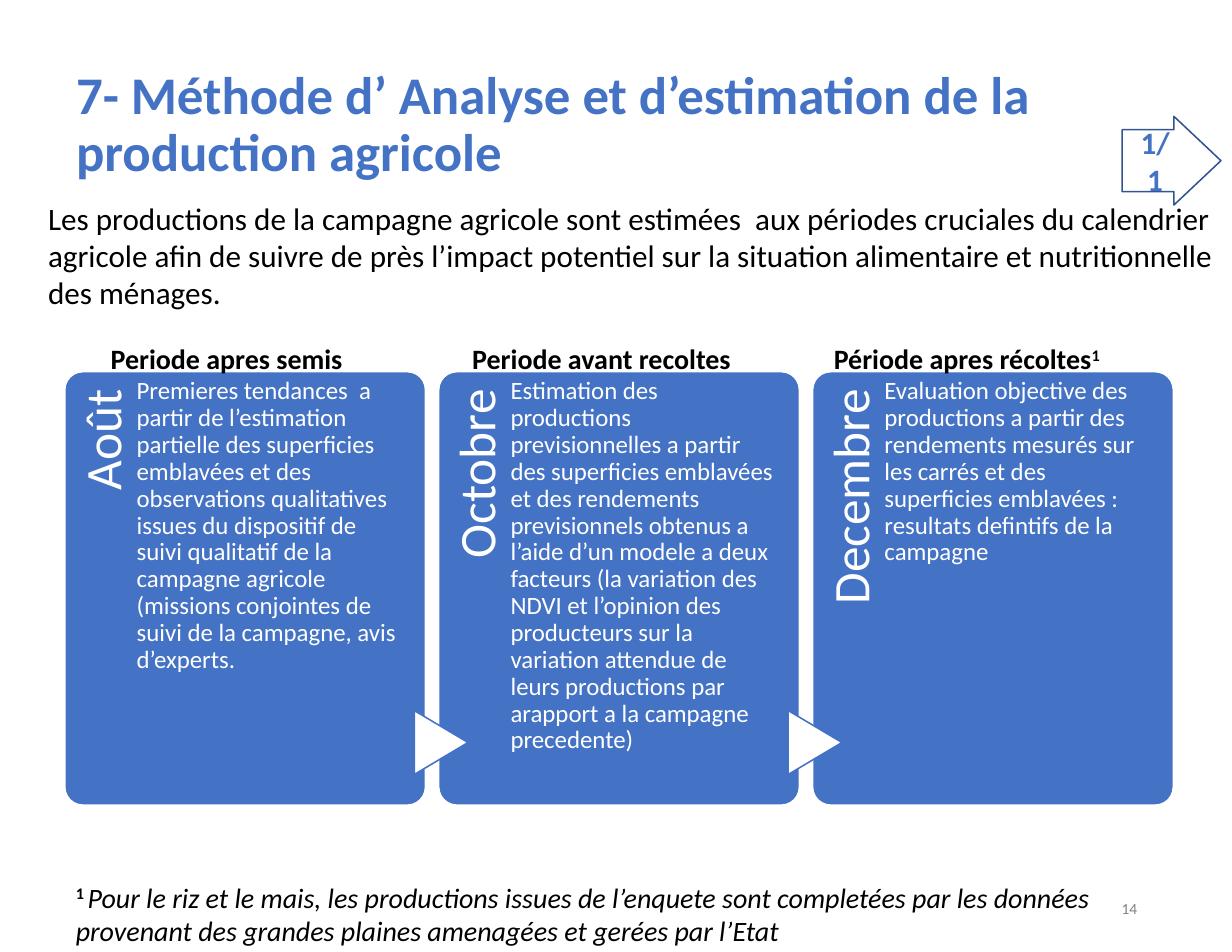
from dataclasses import dataclass

from pptx import Presentation
from pptx.dml.color import RGBColor
from pptx.enum.shapes import MSO_SHAPE
from pptx.enum.text import MSO_ANCHOR, MSO_AUTO_SIZE, PP_ALIGN
from pptx.shapes.autoshape import Shape
from pptx.slide import Slide
from pptx.text.text import TextFrame, _Run
from pptx.util import Cm, Pt

BLUE = RGBColor(0x44, 0x72, 0xC4)
DARK_BLUE = RGBColor(0x32, 0x54, 0x91)
WHITE = RGBColor(0xFF, 0xFF, 0xFF)
BLACK = RGBColor(0, 0, 0)
GREY = RGBColor(0x80, 0x80, 0x80)
FONT = "Calibri"

CARD_LEFT, CARD_TOP = 1.47, 8.43
CARD_WIDTH, CARD_HEIGHT, CARD_PITCH = 8.18, 9.83, 8.48
HEADING_LEFT, HEADING_PITCH = 2.26, 8.2


@dataclass
class Period:
    heading: str
    month: str
    body: str
    note: str = ""


PERIODS = [
    Period(
        "Periode apres semis", "Août",
        "Premieres tendances  a partir de l’estimation partielle des superficies "
        "emblavées et des observations qualitatives issues du dispositif de suivi "
        "qualitatif de la campagne agricole (missions conjointes de suivi de la "
        "campagne, avis d’experts."),
    Period(
        "Periode avant recoltes", "Octobre",
        "Estimation des productions previsionnelles a partir des superficies "
        "emblavées et des rendements previsionnels obtenus a l’aide d’un modele a "
        "deux facteurs (la variation des NDVI et l’opinion des producteurs sur la "
        "variation attendue de leurs productions par arapport a la campagne "
        "precedente)"),
    Period(
        "Période apres récoltes", "Decembre",
        "Evaluation objective des productions a partir des  rendements mesurés sur "
        "les carrés et des superficies emblavées : resultats defintifs de la "
        "campagne", "1"),
]


def format_run(r: _Run, size: float, color: RGBColor, bold: bool = False,
               italic: bool = False, superscript: bool = False) -> None:
    f = r.font
    f.name, f.size, f.bold, f.italic = FONT, Pt(size), bold, italic
    f.color.rgb = color
    if superscript:
        r._r.get_or_add_rPr().set("baseline", "30000")


def set_text(tf: TextFrame, text: str, size: float, color: RGBColor,
             bold: bool = False, align: PP_ALIGN = PP_ALIGN.LEFT,
             spacing: float = 1.0) -> None:
    tf.word_wrap = True
    tf.text = text
    p = tf.paragraphs[0]
    p.alignment, p.line_spacing = align, spacing
    format_run(p.runs[0], size, color, bold)


def add_text(s: Slide, left: float, top: float, width: float, height: float,
             text: str, size: float, color: RGBColor = BLACK, **style) -> Shape:
    box = s.shapes.add_textbox(Cm(left), Cm(top), Cm(width), Cm(height))
    set_text(box.text_frame, text, size, color, **style)
    return box


def set_insets(tf: TextFrame, top: float, right: float = 0) -> None:
    tf.margin_left = tf.margin_bottom = 0
    tf.margin_top, tf.margin_right = Cm(top), Cm(right)


def add_shape(s: Slide, kind: MSO_SHAPE, left: float, top: float, width: float,
              height: float, fill: RGBColor | None, line: RGBColor) -> Shape:
    sp = s.shapes.add_shape(kind, Cm(left), Cm(top), Cm(width), Cm(height))
    sp.shadow.inherit = False
    if fill is None:
        sp.fill.background()
    else:
        sp.fill.solid()
        sp.fill.fore_color.rgb = fill
    sp.line.color.rgb, sp.line.width = line, Pt(1)
    return sp


def add_card(s: Slide, index: int, period: Period) -> None:
    left = CARD_LEFT + index * CARD_PITCH
    card = add_shape(s, MSO_SHAPE.ROUNDED_RECTANGLE, left, CARD_TOP,
                     CARD_WIDTH, CARD_HEIGHT, BLUE, WHITE)
    card.adjustments[0] = 0.05

    month = add_text(s, left - 3.23, 11.63, 8.05, 1.63, period.month, 33, WHITE,
                     align=PP_ALIGN.RIGHT, spacing=0.9)
    month.rotation = 270
    set_insets(month.text_frame, 0.3, 0.41)

    if index > 0:
        arrow = add_shape(s, MSO_SHAPE.FLOWCHART_EXTRACT, left - 0.67, 16.23,
                          1.45, 1.22, WHITE, BLUE)
        arrow.rotation = 90

    body = add_text(s, left + 1.63, CARD_TOP, 6.1, CARD_HEIGHT, period.body, 16,
                    WHITE, spacing=0.9)
    set_insets(body.text_frame, 0.15)


def add_heading(s: Slide, index: int, period: Period) -> None:
    box = add_text(s, HEADING_LEFT + index * HEADING_PITCH, 7.62, 7.82, 1.02,
                   period.heading, 18, bold=True)
    if period.note:
        r = box.text_frame.paragraphs[0].add_run()
        r.text = period.note
        format_run(r, 18, BLACK, bold=True, superscript=True)


def add_footnote(s: Slide) -> None:
    box = add_text(s, 1.47, 19.84, 25.83, 1.8, "1 ", 18)
    p = box.text_frame.paragraphs[0]
    format_run(p.runs[0], 18, BLACK, bold=True, superscript=True)
    r = p.add_run()
    r.text = ("Pour le riz et le mais, les productions issues de l’enquete sont "
              "completées par les données provenant des grandes plaines amenagées "
              "et gerées par l’Etat")
    format_run(r, 18, BLACK, italic=True)


def main() -> None:
    prs = Presentation()
    prs.slide_width, prs.slide_height = Cm(27.94), Cm(21.59)
    s = prs.slides.add_slide(prs.slide_layouts[5])

    title = s.shapes.title
    title.left, title.top, title.width, title.height = (
        Cm(1.47), Cm(1.27), Cm(24.64), Cm(3.15))
    tf = title.text_frame
    set_text(tf, "7- Méthode d’ Analyse et d’estimation de la production agricole",
             34, BLUE, bold=True, spacing=0.9)
    tf.auto_size = MSO_AUTO_SIZE.NONE
    tf.vertical_anchor = MSO_ANCHOR.MIDDLE

    for i, period in enumerate(PERIODS):
        add_card(s, i, period)

    number = add_text(s, 19.74, 20.02, 6.3, 1.14, "14", 9.9, GREY,
                      align=PP_ALIGN.RIGHT)
    number.text_frame.vertical_anchor = MSO_ANCHOR.MIDDLE

    add_text(s, 0.84, 4.39, 27.1, 2.82,
             "Les productions de la campagne agricole sont estimées  aux périodes "
             "cruciales du calendrier agricole afin de suivre de près l’impact "
             "potentiel sur la situation alimentaire et nutritionnelle des ménages.",
             20)

    page = add_shape(s, MSO_SHAPE.RIGHT_ARROW, 25.45, 2.64, 2.24, 2.01, None,
                     DARK_BLUE)
    page.adjustments[0], page.adjustments[1] = 0.7, 0.53
    set_text(page.text_frame, "1/1", 20, BLUE, bold=True, align=PP_ALIGN.CENTER)
    page.text_frame.vertical_anchor = MSO_ANCHOR.MIDDLE

    for i, period in enumerate(PERIODS):
        add_heading(s, i, period)
    add_footnote(s)
    prs.save("out.pptx")


if __name__ == "__main__":
    main()
